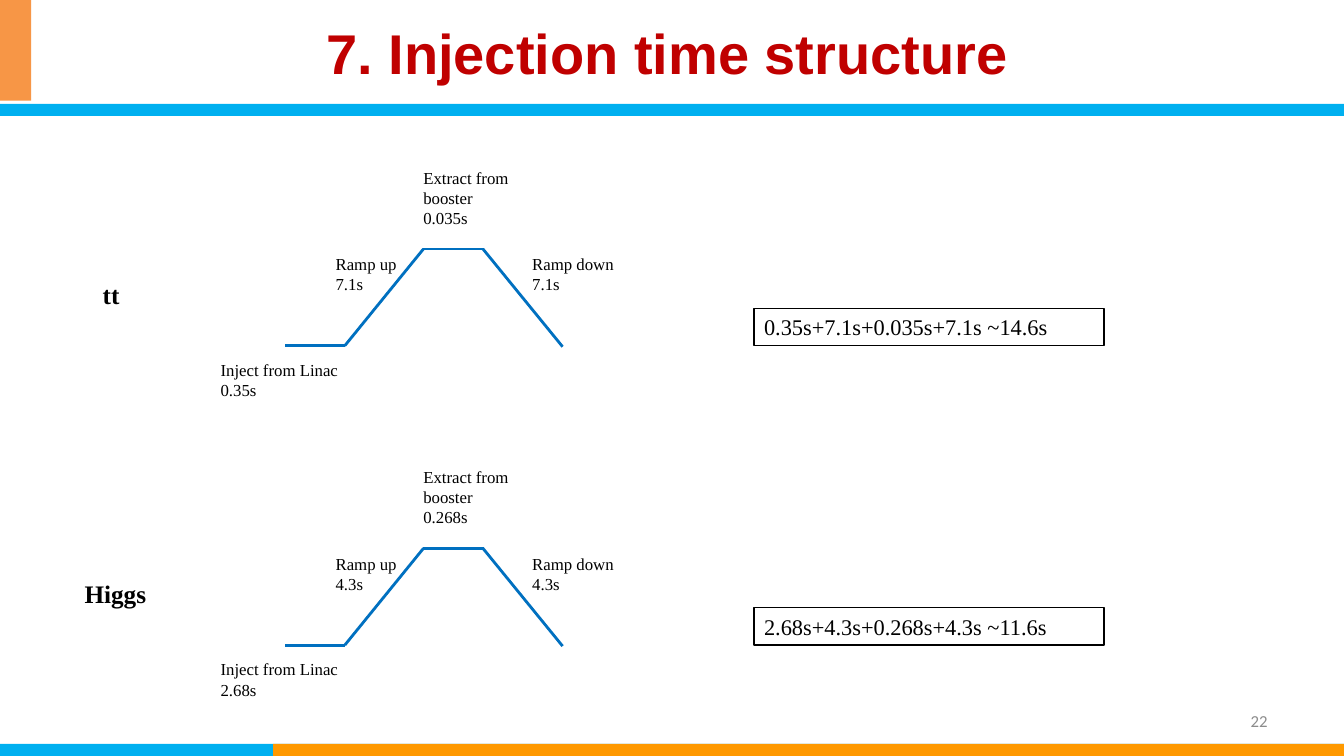
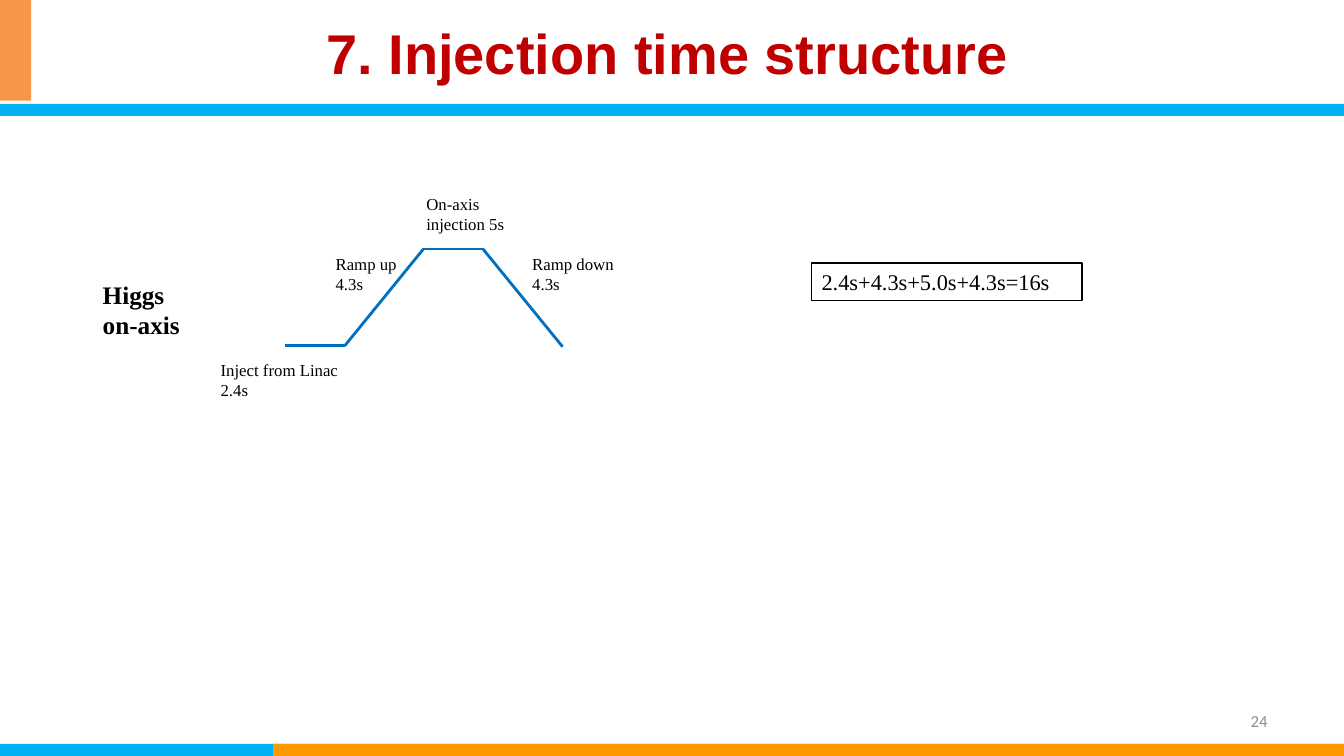
import pptx
import pptx.util
import pptx.dml.color
import pptx.enum.shapes
import pptx.enum.text
import pptx.oxml

Inches = pptx.util.Inches
Pt = pptx.util.Pt
RGBColor = pptx.dml.color.RGBColor
ALIGN = pptx.enum.text.PP_ALIGN
ANCHOR = pptx.enum.text.MSO_ANCHOR
RECTANGLE = pptx.enum.shapes.MSO_SHAPE.RECTANGLE
STRAIGHT = pptx.enum.shapes.MSO_CONNECTOR.STRAIGHT

BLACK = RGBColor(0x00, 0x00, 0x00)
WHITE = RGBColor(0xFF, 0xFF, 0xFF)
SKY = RGBColor(0x00, 0xB0, 0xF0)
ORANGE = RGBColor(0xFF, 0x99, 0x00)
APRICOT = RGBColor(0xF7, 0x96, 0x46)
RED = RGBColor(0xC0, 0x00, 0x00)
BLUE = RGBColor(0x00, 0x70, 0xC0)
GREY = RGBColor(0x8C, 0x8C, 0x8C)

TITLE = "7. Injection time structure"
TITLE_FONT = {"name": "Arial", "size": Pt(40), "bold": True}
NUMBER_FONT = {"name": "Calibri", "size": Pt(12)}
MODE_FONT = {"name": "Times New Roman", "size": Pt(18), "bold": True}
STEP_FONT = {"name": "Times New Roman", "size": Pt(12)}
TOTAL_FONT = {"name": "Times New Roman", "size": Pt(16)}

BANDS = [
    (0, 7.38, 13.33, 0.12, SKY),
    (2.71, 7.38, 10.63, 0.12, ORANGE),
    (0, 1.03, 13.33, 0.12, SKY),
    (0, 0, 0.31, 1, APRICOT),
]

RAMP = [
    (2.83, 0.96, 3.42, 0.96),
    (3.42, 0.96, 4.2, 0),
    (4.2, 0, 4.8, 0),
    (4.79, 0, 5.58, 0.97),
]


def write(shape, lines, font, color=BLACK, align=ALIGN.LEFT, anchor=ANCHOR.TOP):
    frame = shape.text_frame
    frame.word_wrap = True
    frame.vertical_anchor = anchor
    frame.text = "\n".join(lines)
    for paragraph in frame.paragraphs:
        paragraph.alignment = align
        for key, value in font.items():
            setattr(paragraph.font, key, value)
        paragraph.font.color.rgb = color
    return frame


def add_box(shapes, left, top, width, height, fill):
    box = shapes.add_shape(RECTANGLE, Inches(left), Inches(top), Inches(width), Inches(height))
    box.shadow.inherit = False
    box.fill.solid()
    box.fill.fore_color.rgb = fill
    box.line.fill.background()
    return box


SLIDES = [
    ("22", [
        {
            "top": 2.47,
            "mode": ("tt", 0.92, 0.73, 0.4),
            "inject": "0.35s",
            "ramp": "7.1s",
            "plateau": (["Extract from booster", "0.035s"], 4.1, -0.86, 1.08, 0.71),
            "total": ("0.35s+7.1s+0.035s+7.1s ~14.6s", 7.48, 0.59, 3.47),
        },
        {
            "top": 5.44,
            "mode": ("Higgs", 0.74, 0.91, 0.4),
            "inject": "2.68s",
            "ramp": "4.3s",
            "plateau": (["Extract from booster", "0.268s"], 4.1, -0.86, 1.08, 0.71),
            "total": ("2.68s+4.3s+0.268s+4.3s ~11.6s", 7.48, 0.59, 3.47),
        },
    ]),
    ("24", [
        {
            "top": 2.47,
            "mode": ("Higgs on-axis", 0.92, 1.11, 0.71),
            "inject": "2.4s",
            "ramp": "4.3s",
            "plateau": (["On-axis injection 5s"], 4.13, -0.6, 1.32, 0.5),
            "total": ("2.4s+4.3s+5.0s+4.3s=16s", 8.05, 0.14, 2.68),
        },
    ]),
]

deck = pptx.Presentation()
deck.slide_width = Inches(13.33)
deck.slide_height = Inches(7.5)

for page, cycles in SLIDES:
    slide = deck.slides.add_slide(deck.slide_layouts[6])
    for band in BANDS:
        add_box(slide.shapes, *band)

    title = slide.shapes.add_textbox(Inches(0.73), Inches(0.16), Inches(11.77), Inches(0.79))
    heading = write(title, [TITLE], TITLE_FONT, RED, ALIGN.CENTER, ANCHOR.MIDDLE)
    heading.paragraphs[0].line_spacing = 0.9
    number = slide.shapes.add_textbox(Inches(9.56), Inches(6.95), Inches(3.11), Inches(0.4))
    write(number, [page], NUMBER_FONT, GREY, ALIGN.RIGHT, ANCHOR.MIDDLE)

    for cycle in cycles:
        top = cycle["top"]
        name, left, width, height = cycle["mode"]
        mode = slide.shapes.add_textbox(
            Inches(left), Inches(top + 0.25), Inches(width), Inches(height))
        write(mode, [name], MODE_FONT)

        timing, left, offset, width = cycle["total"]
        total = add_box(slide.shapes, left, top + offset, width, 0.37, WHITE)
        total.line.color.rgb = BLACK
        total.line.width = Pt(1)
        write(total, [timing], TOTAL_FONT)

        diagram = slide.shapes.add_group_shape().shapes
        for x1, y1, x2, y2 in RAMP:
            segment = diagram.add_connector(
                STRAIGHT, Inches(x1), Inches(top + y1), Inches(x2), Inches(top + y2))
            segment.line.color.rgb = BLUE
            segment.line.width = Pt(2)
            segment._element.spPr.append(pptx.oxml.parse_xml(
                '<a:effectLst xmlns:a="http://schemas.openxmlformats.org/drawingml/2006/main"/>'))

        steps = [
            (["Inject from Linac", cycle["inject"]], 2.09, 1.05, 1.46, 0.5),
            (["Ramp up", cycle["ramp"]], 3.23, 0, 0.91, 0.5),
            (["Ramp down", cycle["ramp"]], 5.18, 0, 1.08, 0.5),
            cycle["plateau"],
        ]
        for lines, left, offset, width, height in steps:
            step = diagram.add_textbox(
                Inches(left), Inches(top + offset), Inches(width), Inches(height))
            write(step, lines, STEP_FONT)

deck.save("out.pptx")
